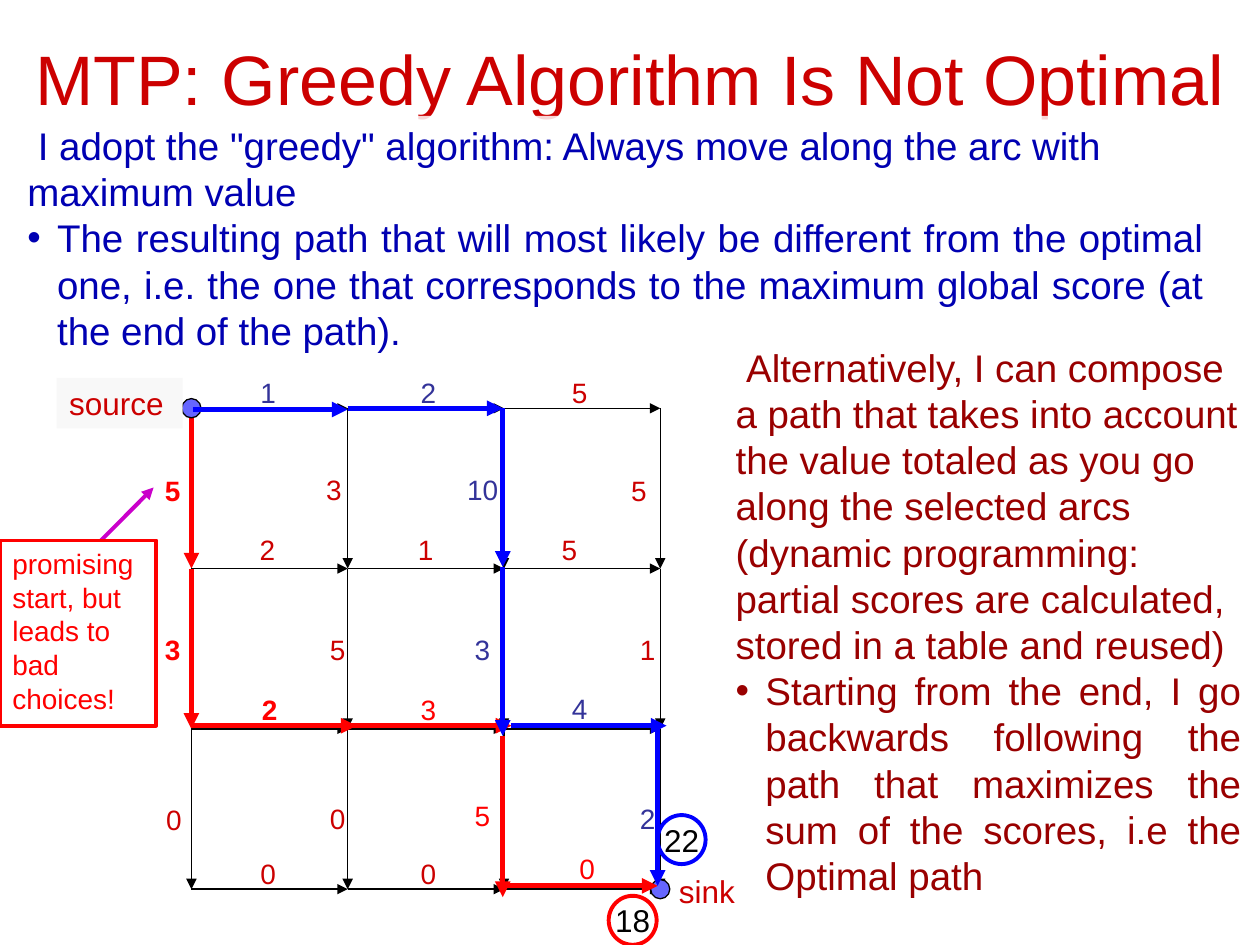
from lxml import etree
from pptx import Presentation
from pptx.dml.color import RGBColor
from pptx.enum.shapes import MSO_CONNECTOR, MSO_SHAPE
from pptx.enum.text import MSO_ANCHOR, PP_ALIGN
from pptx.oxml.ns import qn
from pptx.util import Pt

STRAIGHT = MSO_CONNECTOR.STRAIGHT
RECT, OVAL = MSO_SHAPE.RECTANGLE, MSO_SHAPE.OVAL
TOP, MIDDLE = MSO_ANCHOR.TOP, MSO_ANCHOR.MIDDLE
LEFT, CENTER, JUSTIFY = PP_ALIGN.LEFT, PP_ALIGN.CENTER, PP_ALIGN.JUSTIFY

BLACK = RGBColor(0x00, 0x00, 0x00)
WHITE = RGBColor(0xFF, 0xFF, 0xFF)
RED = RGBColor(0xFF, 0x00, 0x00)
BLUE = RGBColor(0x00, 0x00, 0xFF)
CRIMSON = RGBColor(0xCC, 0x00, 0x00)
INDIGO = RGBColor(0x33, 0x33, 0x99)
NAVY = RGBColor(0x00, 0x00, 0xB2)
MAROON = RGBColor(0x99, 0x00, 0x00)
PURPLE = RGBColor(0xCA, 0x00, 0xCA)
NODE_BLUE = RGBColor(0x66, 0x66, 0xFF)
PALE_GREY = RGBColor(0xF8, 0xF8, 0xF8)

TITLE = "MTP: Greedy Algorithm Is Not Optimal"
GREEDY = (
    'I adopt the "greedy" algorithm: Always move along the arc with maximum value',
    "The resulting path that will most likely be different from the optimal one, "
    "i.e. the one that corresponds to the maximum global score (at the end of the path).",
)
DYNAMIC = (
    "Alternatively, I can compose a path that takes into account the value totaled "
    "as you go along the selected arcs (dynamic programming: partial scores are "
    "calculated, stored in a table and reused)",
    "Starting from the end, I go backwards following the path that maximizes the "
    "sum of the scores, i.e the Optimal path",
)
NOTE = "promising start, but leads to bad choices!"

GRID_LEFT, GRID_TOP = 109.4, 233.3
COLUMN_STEP, ROW_STEP = 89.3, 91.6
SIZE = 4
GREEDY_START = {(0, 0), (0, 1)}  # downward arcs of the grid that are red

# weight, left, top, width, colour, bold
WEIGHTS = [
    ("1", 141.8, 211, 22, INDIGO, False),
    ("2", 233.3, 211, 22, INDIGO, False),
    ("5", 319.7, 211, 37, CRIMSON, False),
    ("2", 141.3, 301, 32, CRIMSON, False),
    ("1", 231.8, 301, 22, CRIMSON, False),
    ("5", 313.9, 301, 32, CRIMSON, False),
    ("2", 142.6, 392.4, 33, RED, True),
    ("3", 233.3, 392.4, 22, RED, False),
    ("4", 319.7, 391.7, 22, INDIGO, False),
    ("0", 141.8, 486, 22, CRIMSON, False),
    ("0", 233.3, 486, 22, CRIMSON, False),
    ("0", 324, 483.1, 22, RED, False),
    ("5", 87.1, 267, 22, RED, True),
    ("3", 179.3, 266.4, 21, CRIMSON, False),
    ("10", 259.9, 266.4, 42, INDIGO, False),
    ("5", 353.5, 267, 27, CRIMSON, False),
    ("3", 87.1, 357.8, 22, RED, True),
    ("5", 181.4, 357.8, 20, CRIMSON, False),
    ("3", 264.2, 357.8, 27, INDIGO, False),
    ("1", 358.6, 357.8, 22, CRIMSON, False),
    ("0", 87.8, 455, 27, CRIMSON, False),
    ("0", 181.4, 454.3, 20, CRIMSON, False),
    ("5", 264.2, 452.9, 27, RED, False),
    ("2", 358.6, 454.3, 22, INDIGO, False),
]

GREEDY_ROUTE = [
    ((109.4, 414.7), (203.8, 414.7)),
    ((198.7, 414.7), (292.3, 414.7)),
    ((287.3, 420.5), (287.3, 512.6)),
    ((287.3, 506.2), (375.8, 506.2)),
]
BEST_ROUTE = [
    ((110.2, 234), (198.7, 234)),
    ((198.7, 233.3), (287.3, 233.3)),
    ((287.3, 233.3), (287.3, 324)),
    ((292.3, 414.7), (380.9, 414.7)),
    ((287.3, 324), (287.3, 420.5)),
    ((375.8, 414.7), (375.8, 506.2)),
]

prs = Presentation()
prs.slide_width, prs.slide_height = Pt(720), Pt(540)
slide = prs.slides.add_slide(prs.slide_layouts[6])
shapes = slide.shapes


def set_font(paragraph, size, color, bold=False):
    font = paragraph.font
    font.name, font.size, font.bold = "Arial", Pt(size), bold
    font.color.rgb = color


def write(shape, text, size, color, bold=False, align=LEFT, anchor=TOP, wrap=True):
    frame = shape.text_frame
    frame.word_wrap, frame.vertical_anchor = wrap, anchor
    paragraph = frame.paragraphs[0]
    paragraph.text, paragraph.alignment = text, align
    set_font(paragraph, size, color, bold)


def add_label(box, *args, **kwargs):
    write(shapes.add_textbox(*map(Pt, box)), *args, **kwargs)


def add_figure(kind, box, fill=None, line=None, weight=0.75):
    figure = shapes.add_shape(kind, *map(Pt, box))
    figure.shadow.inherit = False
    if fill is None:
        figure.fill.background()
    else:
        figure.fill.solid()
        figure.fill.fore_color.rgb = fill
    if line is None:
        figure.line.fill.background()
    else:
        figure.line.color.rgb, figure.line.width = line, Pt(weight)
    return figure


def add_arrow(start, end, color=BLACK, weight=0.75):
    arrow = shapes.add_connector(STRAIGHT, *map(Pt, start + end))
    arrow.line.color.rgb, arrow.line.width = color, Pt(weight)
    etree.SubElement(arrow.line._get_or_add_ln(), qn("a:tailEnd"), type="triangle")
    etree.SubElement(arrow._element.spPr, qn("a:effectLst"))


def write_intro_and_bullet(shape, texts, color, bullet_indent):
    """Write a plain opening paragraph followed by a justified bullet."""
    frame = shape.text_frame
    frame.word_wrap, frame.vertical_anchor = True, TOP
    intro, bullet = frame.paragraphs[0], frame.add_paragraph()
    layouts = ((intro, LEFT, 0, 6), (bullet, JUSTIFY, 17, bullet_indent))
    for (paragraph, align, margin, indent), text in zip(layouts, texts):
        paragraph.text, paragraph.alignment = text, align
        properties = paragraph._p.get_or_add_pPr()
        properties.set("marL", str(Pt(margin)))
        properties.set("indent", str(Pt(indent)))
        if paragraph is bullet:
            etree.SubElement(properties, qn("a:buFont"), typeface="Arial")
            etree.SubElement(properties, qn("a:buChar"), char="•")
        set_font(paragraph, 22, color)


def node(column, row):
    return GRID_LEFT + column * COLUMN_STEP, GRID_TOP + row * ROW_STEP


add_label((0, 9.4, 720, 69.8), TITLE, 40, CRIMSON, align=CENTER, anchor=MIDDLE)

for row in range(SIZE):
    for column in range(SIZE):
        if column < SIZE - 1:
            add_arrow(node(column, row), node(column + 1, row))
        if row < SIZE - 1:
            style = (RED, 3) if (column, row) in GREEDY_START else (BLACK, 0.75)
            add_arrow(node(column, row), node(column, row + 1), *style)

for weight, left, top, width, color, bold in WEIGHTS:
    add_label((left, top, width, 26.6), weight, 16, color, bold)

for x, y in (node(0, 0), node(SIZE - 1, SIZE - 1)):
    add_figure(OVAL, (x - 5.5, y - 5.5, 11, 11), NODE_BLUE, BLACK)

add_arrow((54, 312.5), (87.8, 278.6), PURPLE, 2.25)
write(add_figure(RECT, (0, 308.9, 89.3, 105.8), WHITE, RED, 2.25), NOTE, 16, RED)
write(add_figure(RECT, (32.4, 216, 72, 28.8), PALE_GREY), "source", 18, CRIMSON)
add_label((380.9, 494.6, 49.7, 28.8), "sink", 18, CRIMSON, wrap=False)

for route, color, total, left, top in (
    (GREEDY_ROUTE, RED, "18", 347.8, 511.9),
    (BEST_ROUTE, BLUE, "22", 375.8, 465.8),
):
    for start, end in route:
        add_arrow(start, end, color, 3)
    score = add_figure(OVAL, (left, top, 27.4, 28), line=color, weight=2.25)
    write(score, total, 18, BLACK, align=CENTER, anchor=MIDDLE, wrap=False)

greedy_box = add_figure(RECT, (8.6, 66.2, 686.2, 140.4), WHITE)
fill_color = greedy_box.fill._xPr.find(qn("a:solidFill"))[0]
etree.SubElement(fill_color, qn("a:alpha"), val="84000")
write_intro_and_bullet(greedy_box, GREEDY, NAVY, -17)
dynamic_box = shapes.add_textbox(*map(Pt, (413.3, 193, 303.1, 326.9)))
write_intro_and_bullet(dynamic_box, DYNAMIC, MAROON, -17)

prs.save("out.pptx")
